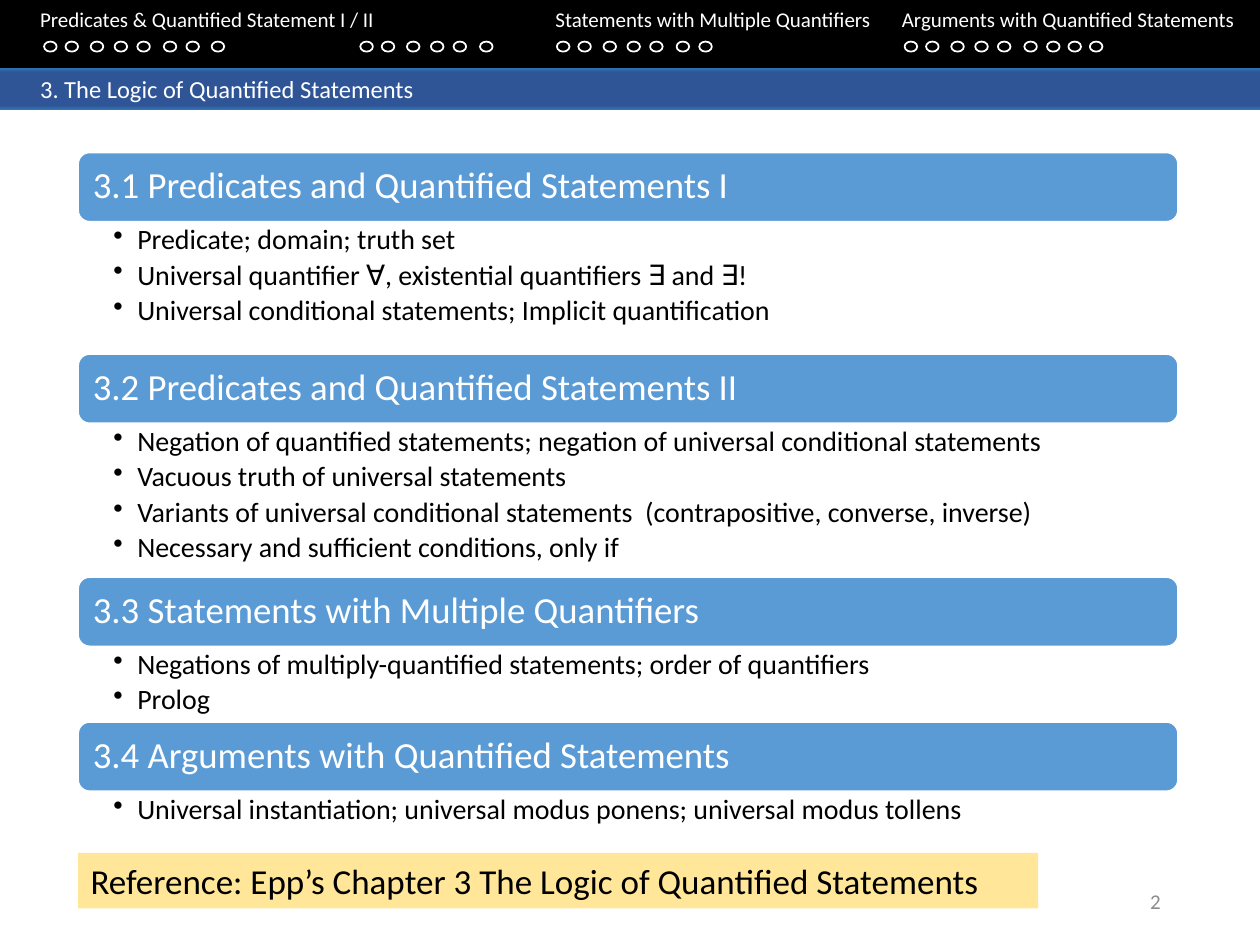
from dataclasses import dataclass

from lxml import etree
from pptx import Presentation
from pptx.dml.color import RGBColor
from pptx.enum.shapes import MSO_SHAPE
from pptx.enum.text import MSO_ANCHOR, PP_ALIGN
from pptx.oxml.ns import qn
from pptx.util import Inches, Pt

RECT, ROUND_RECT, OVAL = MSO_SHAPE.RECTANGLE, MSO_SHAPE.ROUNDED_RECTANGLE, MSO_SHAPE.OVAL
TOP, MIDDLE = MSO_ANCHOR.TOP, MSO_ANCHOR.MIDDLE
LEFT, RIGHT = PP_ALIGN.LEFT, PP_ALIGN.RIGHT


@dataclass(frozen=True)
class Theme:
    font: str = "Calibri"
    white: str = "FFFFFF"
    black: str = "000000"
    gray: str = "8C8C8C"
    heading_fill: str = "5B9BD5"
    reference_fill: str = "FFE699"
    band_stops: tuple = ((0, "2E75B6"), (11, "2F5597"), (91, "2F5597"), (100, "2E75B6"))
    small: int = 12
    band: int = 14
    body: int = 16
    reference: int = 20
    heading: int = 21


THEME = Theme()
PLAIN_INSETS = (0.1, 0.05, 0.1, 0.05)
NAVIGATION = ("Predicates & Quantified Statement I / II",
              "Statements with Multiple Quantifiers",
              "Arguments with Quantified Statements")
DOT_STEPS = (0, 0.17, 0.37, 0.56, 0.74, 0.95, 1.13, 1.3, 1.47)
DOT_GROUPS = ((0.35, DOT_STEPS[:7] + (1.33,)), (2.86, DOT_STEPS[:6]),
              (4.42, DOT_STEPS[:7]), (7.18, DOT_STEPS))

# Heading, height of the list below it, list items
SECTIONS = (
    ("3.1 Predicates and Quantified Statements I", 1.05,
     ("Predicate; domain; truth set",
      "Universal quantifier ∀, existential quantifiers ∃ and ∃!",
      "Universal conditional statements; Implicit quantification")),
    ("3.2 Predicates and Quantified Statements II", 1.22,
     ("Negation of quantified statements; negation of universal conditional statements",
      "Vacuous truth of universal statements",
      "Variants of universal conditional statements  (contrapositive, converse, inverse)",
      "Necessary and sufficient conditions, only if")),
    ("3.3 Statements with Multiple Quantifiers", 0.6,
     ("Negations of multiply-quantified statements; order of quantifiers", "Prolog")),
    ("3.4 Arguments with Quantified Statements", 0.38,
     ("Universal instantiation; universal modus ponens; universal modus tollens",)),
)


def add_shape(shapes, kind, left, top, width, height, fill=None, line=None):
    shape = shapes.add_shape(kind, Inches(left), Inches(top), Inches(width), Inches(height))
    shape.shadow.inherit = False
    if fill:
        shape.fill.solid()
        shape.fill.fore_color.rgb = RGBColor.from_string(fill)
    else:
        shape.fill.background()
    if line:
        shape.line.color.rgb = RGBColor.from_string(line)
        shape.line.width = Pt(1)
    else:
        shape.line.fill.background()
    return shape


def add_box(page, left, top, width, height):
    return page.shapes.add_textbox(Inches(left), Inches(top), Inches(width), Inches(height))


def set_gradient(shape, stops):
    shape.fill.gradient()
    shape.fill.gradient_angle = 270
    stop_list = shape._element.spPr.find(".//" + qn("a:gsLst"))
    for old_stop in list(stop_list):
        stop_list.remove(old_stop)
    for percent, color in stops:
        stop = etree.SubElement(stop_list, qn("a:gs"), pos=str(percent * 1000))
        etree.SubElement(stop, qn("a:srgbClr"), val=color)


def set_bullet(para):
    properties = para._p.get_or_add_pPr()
    properties.set("marL", str(Inches(0.19)))
    properties.set("indent", str(Inches(-0.19)))
    etree.SubElement(properties, qn("a:buChar"), char="•")


def set_tabs(para, stops):
    tab_list = etree.SubElement(para._p.get_or_add_pPr(), qn("a:tabLst"))
    for stop in stops:
        etree.SubElement(tab_list, qn("a:tab"), pos=str(Inches(stop)), algn="l")


def write_text(box, *lines, size, color, align=LEFT, anchor=TOP, insets=PLAIN_INSETS,
               spacing=None, after=None, bullets=False, tabs=()):
    frame = box.text_frame
    frame.word_wrap = True
    frame.vertical_anchor = anchor
    (frame.margin_left, frame.margin_top,
     frame.margin_right, frame.margin_bottom) = map(Inches, insets)
    for index, line in enumerate(lines):
        para = frame.add_paragraph() if index else frame.paragraphs[0]
        para.alignment = align
        if spacing:
            para.line_spacing = spacing
        if after:
            para.space_after = Pt(after)
        if bullets:
            para.level = 1
            set_bullet(para)
        if tabs:
            set_tabs(para, tabs)
        span = para.add_run()
        span.text = line
        span.font.name = THEME.font
        span.font.size = Pt(size)
        span.font.color.rgb = RGBColor.from_string(color)


def add_header(page):
    # Chapter title band
    band = add_shape(page.shapes, RECT, 0, 0.54, 10, 0.33)
    set_gradient(band, THEME.band_stops)
    write_text(band, "\t3. The Logic of Quantified Statements",
               size=THEME.band, color=THEME.white, tabs=(0.22,))

    # Navigation bar with its titles and progress dots
    add_shape(page.shapes, RECT, 0, 0, 10, 0.54, fill=THEME.black)
    write_text(add_box(page, 0, 0, 10, 0.5), "\t" + "\t".join(NAVIGATION),
               size=THEME.small, color=THEME.white, tabs=(0.22, 2.75, 4.31, 7.06, 9.42))
    for start, steps in DOT_GROUPS:
        group = page.shapes.add_group_shape()
        for step in steps:
            add_shape(group.shapes, OVAL, start + step, 0.33, 0.1, 0.08, line=THEME.white)


def add_section(page, top, heading, list_height, items):
    bar = add_shape(page.shapes, ROUND_RECT, 0.62, top, 8.73, 0.55,
                    fill=THEME.heading_fill, line=THEME.white)
    write_text(bar, heading, size=THEME.heading, color=THEME.white, anchor=MIDDLE,
               insets=(0.09, 0.09, 0.09, 0.09), spacing=0.9)
    write_text(add_box(page, 0.62, top + 0.55, 8.73, list_height), *items,
               size=THEME.body, color=THEME.black, insets=(0.28, 0.03, 0.16, 0.03),
               spacing=0.9, after=3, bullets=True)
    return top + 0.55 + list_height


def add_footer(page):
    reference = add_shape(page.shapes, RECT, 0.62, 6.77, 7.62, 0.44, fill=THEME.reference_fill)
    write_text(reference, "Reference: Epp’s Chapter 3 The Logic of Quantified Statements",
               size=THEME.reference, color=THEME.black)
    write_text(add_box(page, 7.06, 6.95, 2.25, 0.4), "2",
               size=THEME.small, color=THEME.gray, align=RIGHT, anchor=MIDDLE)


def main():
    deck = Presentation()
    deck.slide_width, deck.slide_height = Inches(10), Inches(7.5)
    page = deck.slides.add_slide(deck.slide_layouts[6])

    add_header(page)
    top = 1.21
    for heading, list_height, items in SECTIONS:
        top = add_section(page, top, heading, list_height, items)
    add_footer(page)

    deck.save("out.pptx")


if __name__ == "__main__":
    main()
